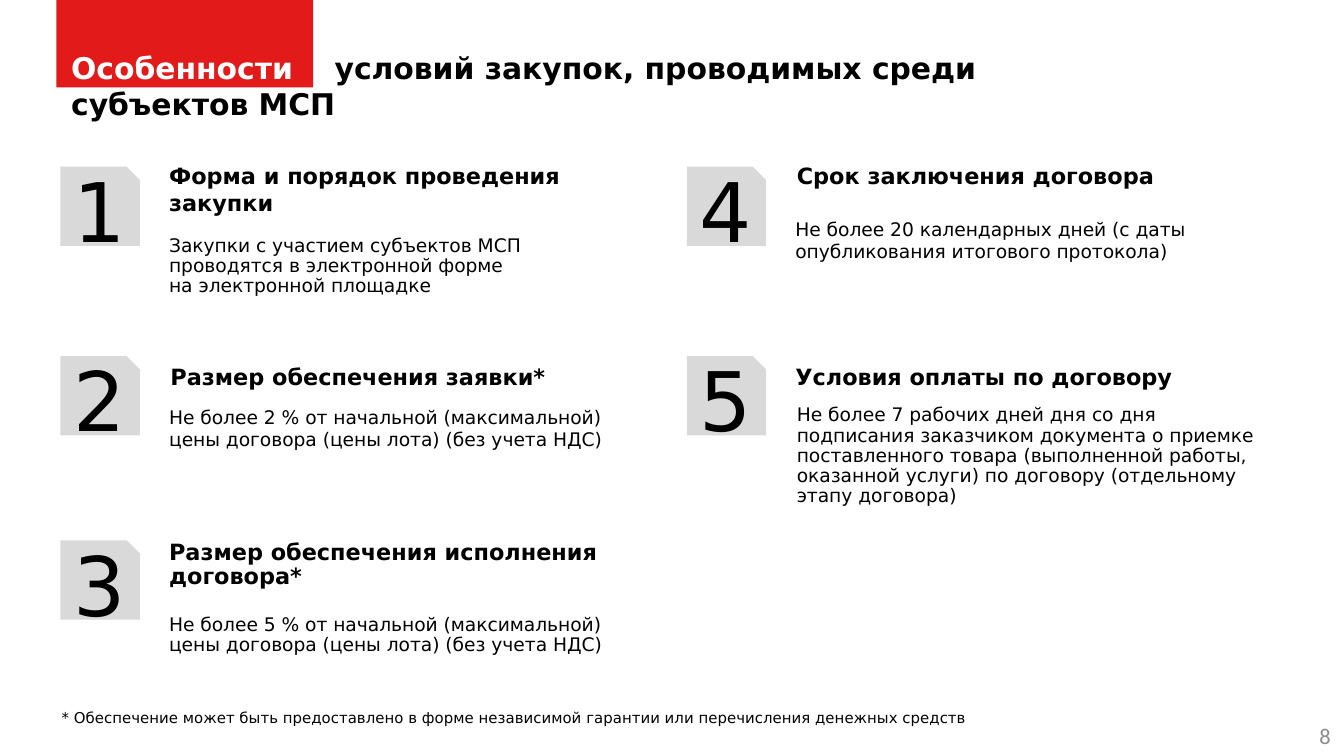
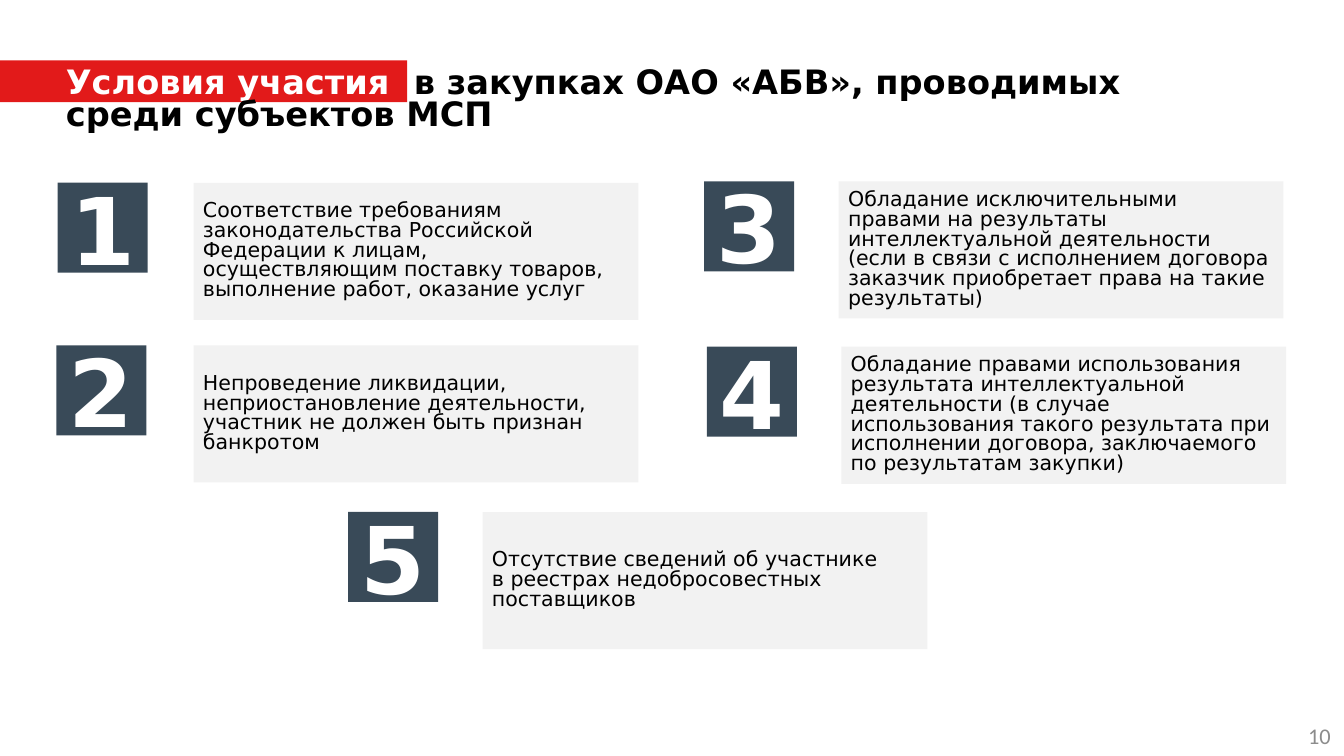
from dataclasses import dataclass

from lxml import etree
from pptx import Presentation
from pptx.dml.color import RGBColor
from pptx.enum import shapes, text
from pptx.oxml import ns
from pptx import util as u

RED = RGBColor(0xE2, 0x1A, 0x1A)
SLATE = RGBColor(0x39, 0x4A, 0x58)
SILVER = RGBColor(0xD9, 0xD9, 0xD9)
PALE = RGBColor(0xF2, 0xF2, 0xF2)
GREY = RGBColor(0x8C, 0x8C, 0x8C)
WHITE = RGBColor(0xFF, 0xFF, 0xFF)
BLACK = RGBColor(0, 0, 0)

RECT = shapes.MSO_SHAPE.RECTANGLE
SNIPPED = shapes.MSO_SHAPE.SNIP_1_RECTANGLE


@dataclass(frozen=True)
class Box:
    left: float
    top: float
    width: float
    height: float

    def lengths(self):
        return tuple(u.Inches(side) for side in (self.left, self.top, self.width, self.height))


@dataclass(frozen=True)
class Style:
    size: float
    color: RGBColor = BLACK
    bold: bool = False
    font: str = "DejaVu Sans"


@dataclass(frozen=True)
class Heading:
    band: Box
    box: Box
    marked: str
    rest: str
    tab: float
    size: float
    spacing: float = 1.0
    before: float = 0


@dataclass(frozen=True)
class Block:
    box: Box
    wording: str
    spacing: float = 1.0
    indent: float = 0


@dataclass(frozen=True)
class Term:
    number: str
    left: float
    top: float
    heading: Block
    body: Block


@dataclass(frozen=True)
class Requirement:
    number: str
    badge_left: float
    panel_left: float
    top: float
    wording: str


HEADING = Style(12, bold=True)
BODY = Style(10)
FOOTNOTE = Style(8)
TERM_NUMBER = Style(44)
REQUIREMENT = Style(11)
REQUIREMENT_NUMBER = Style(50, WHITE, True)
PAGE_NUMBER = Style(12, GREY, font="Calibri")

TERM_BADGE = 0.59
REQUIREMENT_BADGE = 0.67
PANEL_WIDTH, PANEL_HEIGHT = 3.31, 1.02
PANEL_INSETS = (0.07, 0.04)

LEFT, RIGHT = 0.45, 5.11
ROWS = (1.24, 2.65, 4.02)

TERMS_HEADING = Heading(
    Box(0.42, 0, 1.91, 0.65), Box(0.43, 0.32, 8.27, 0.64),
    "Особенности", "условий закупок, проводимых среди субъектов МСП",
    tab=1.96, size=16, before=6,
)
TERMS = (
    Term("1", LEFT, ROWS[0],
         Block(Box(1.16, 1.16, 3.78, 0.51), "Форма и порядок проведения закупки"),
         Block(Box(1.16, 1.71, 3.62, 0.56),
               "Закупки с участием субъектов МСП проводятся в электронной форме\n"
               "на электронной площадке", 0.9)),
    Term("2", LEFT, ROWS[1],
         Block(Box(1.17, 2.65, 3.86, 0.3), "Размер обеспечения заявки*"),
         Block(Box(1.16, 2.97, 3.78, 0.44),
               "Не более 2 % от начальной (максимальной) цены договора "
               "(цены лота) (без учета НДС)")),
    Term("3", LEFT, ROWS[2],
         Block(Box(1.16, 3.98, 3.78, 0.46), "Размер обеспечения исполнения договора*", 0.9),
         Block(Box(1.16, 4.53, 3.7, 0.4),
               "Не более 5 % от начальной (максимальной) цены договора "
               "(цены лота) (без учета НДС)", 0.9)),
    Term("4", RIGHT, ROWS[0],
         Block(Box(5.74, 1.16, 3.78, 0.3), "Срок заключения договора", indent=0.09),
         Block(Box(5.82, 1.57, 3.7, 0.44),
               "Не более 20 календарных дней (с даты опубликования итогового протокола)")),
    Term("5", RIGHT, ROWS[1],
         Block(Box(5.82, 2.65, 3.16, 0.3), "Условия оплаты по договору"),
         Block(Box(5.74, 2.97, 3.78, 0.86),
               "Не более 7 рабочих дней дня со дня подписания заказчиком "
               "документа о приемке поставленного товара (выполненной работы, "
               "оказанной услуги) по договору (отдельному этапу договора)", 0.9, 0.09)),
)
GUARANTEE_NOTE = Block(
    Box(0.36, 5.25, 8.82, 0.21),
    "* Обеспечение может быть предоставлено в форме независимой гарантии "
    "или перечисления денежных средств", 0.8,
)

REQUIREMENTS_HEADING = Heading(
    Box(-0.04, 0.45, 3.07, 0.31), Box(0.39, 0.46, 8.62, 0.59),
    "Условия участия", "в закупках ОАО «АБВ», проводимых среди субъектов МСП",
    tab=2.59, size=18, spacing=0.8,
)
REQUIREMENTS = (
    Requirement("1", 0.43, 1.44, 1.36,
                "Соответствие требованиям законодательства Российской Федерации к лицам, "
                "осуществляющим поставку товаров, выполнение работ, оказание услуг"),
    Requirement("2", 0.42, 1.44, 2.57,
                "Непроведение ликвидации,\nнеприостановление деятельности, "
                "участник не должен быть признан банкротом"),
    Requirement("3", 5.24, 6.24, 1.35,
                "Обладание исключительными\nправами на результаты интеллектуальной "
                "деятельности\n(если в связи с исполнением договора заказчик "
                "приобретает права на такие результаты)"),
    Requirement("4", 5.26, 6.26, 2.58,
                "Обладание правами использования результата интеллектуальной деятельности "
                "(в случае использования такого результата при исполнении договора, "
                "заключаемого\nпо результатам закупки)"),
    Requirement("5", 2.59, 3.59, 3.81,
                "Отсутствие сведений об участнике\nв реестрах недобросовестных поставщиков"),
)


def add_runs(paragraph, wording: str, style: Style) -> None:
    for index, line in enumerate(wording.split("\n")):
        if index:
            paragraph.add_line_break()
        run = paragraph.add_run()
        run.text = line
        run.font.name = style.font
        run.font.size = u.Pt(style.size)
        run.font.bold = style.bold
        run.font.color.rgb = style.color


def write(shape, wording: str, style: Style, align=text.PP_ALIGN.LEFT,
          anchor=text.MSO_ANCHOR.TOP, spacing: float = 1.0, insets=(0.1, 0.05)) -> None:
    frame = shape.text_frame
    frame.word_wrap = True
    frame.vertical_anchor = anchor
    frame.margin_left = frame.margin_right = u.Inches(insets[0])
    frame.margin_top = frame.margin_bottom = u.Inches(insets[1])
    paragraph = frame.paragraphs[0]
    paragraph.alignment = align
    paragraph.line_spacing = spacing
    add_runs(paragraph, wording, style)


def add_panel(slide, kind, box: Box, fill: RGBColor):
    panel = slide.shapes.add_shape(kind, *box.lengths())
    panel.shadow.inherit = False
    panel.fill.solid()
    panel.fill.fore_color.rgb = fill
    panel.line.fill.background()
    return panel


def add_badge(slide, kind, left: float, top: float, side: float, fill: RGBColor,
              number: str, style: Style, insets=(0.1, 0.05)) -> None:
    badge = add_panel(slide, kind, Box(left, top, side, side), fill)
    write(badge, number, style, text.PP_ALIGN.CENTER, text.MSO_ANCHOR.MIDDLE, insets=insets)


def add_block(slide, block: Block, style: Style) -> None:
    label = slide.shapes.add_textbox(*block.box.lengths())
    write(label, block.wording, style, spacing=block.spacing)
    label.text_frame.auto_size = text.MSO_AUTO_SIZE.SHAPE_TO_FIT_TEXT
    if block.indent:
        properties = label.text_frame.paragraphs[0]._p.get_or_add_pPr()
        properties.set("marL", str(u.Inches(block.indent)))


def add_tab_stop(paragraph, position: float) -> None:
    properties = paragraph._p.get_or_add_pPr()
    stops = etree.SubElement(properties, ns.qn("a:tabLst"))
    etree.SubElement(stops, ns.qn("a:tab"), pos=str(u.Inches(position)), algn="l")


def add_heading(slide, heading: Heading) -> None:
    title = slide.shapes.title
    title.left, title.top, title.width, title.height = heading.box.lengths()
    write(title, heading.marked, Style(heading.size, WHITE, True), spacing=heading.spacing)
    title.text_frame.auto_size = text.MSO_AUTO_SIZE.SHAPE_TO_FIT_TEXT
    paragraph = title.text_frame.paragraphs[0]
    paragraph.space_before = u.Pt(heading.before)
    add_tab_stop(paragraph, heading.tab)
    add_runs(paragraph, "\t" + heading.rest, Style(heading.size, bold=True))
    band = add_panel(slide, RECT, heading.band, RED)
    title.element.addprevious(band.element)


def add_slide(deck, heading: Heading, page: str):
    slide = deck.slides.add_slide(deck.slide_layouts[5])
    add_heading(slide, heading)
    footer = slide.shapes.add_textbox(*Box(7.67, 5.32, 2.33, 0.3).lengths())
    write(footer, page, PAGE_NUMBER, text.PP_ALIGN.RIGHT, text.MSO_ANCHOR.MIDDLE)
    return slide


def build_terms(deck) -> None:
    slide = add_slide(deck, TERMS_HEADING, "8")
    for term in TERMS:
        add_badge(slide, SNIPPED, term.left, term.top, TERM_BADGE, SILVER,
                  term.number, TERM_NUMBER)
        add_block(slide, term.heading, HEADING)
        add_block(slide, term.body, BODY)
    add_block(slide, GUARANTEE_NOTE, FOOTNOTE)


def build_requirements(deck) -> None:
    slide = add_slide(deck, REQUIREMENTS_HEADING, "10")
    for item in REQUIREMENTS:
        add_badge(slide, RECT, item.badge_left, item.top, REQUIREMENT_BADGE, SLATE,
                  item.number, REQUIREMENT_NUMBER, PANEL_INSETS)
        box = Box(item.panel_left, item.top, PANEL_WIDTH, PANEL_HEIGHT)
        panel = add_panel(slide, RECT, box, PALE)
        write(panel, item.wording, REQUIREMENT, anchor=text.MSO_ANCHOR.MIDDLE,
              spacing=0.8, insets=PANEL_INSETS)


def main() -> None:
    deck = Presentation()
    deck.slide_width = u.Inches(10)
    deck.slide_height = deck.slide_width * 9 // 16
    build_terms(deck)
    build_requirements(deck)
    deck.save("out.pptx")


if __name__ == "__main__":
    main()
